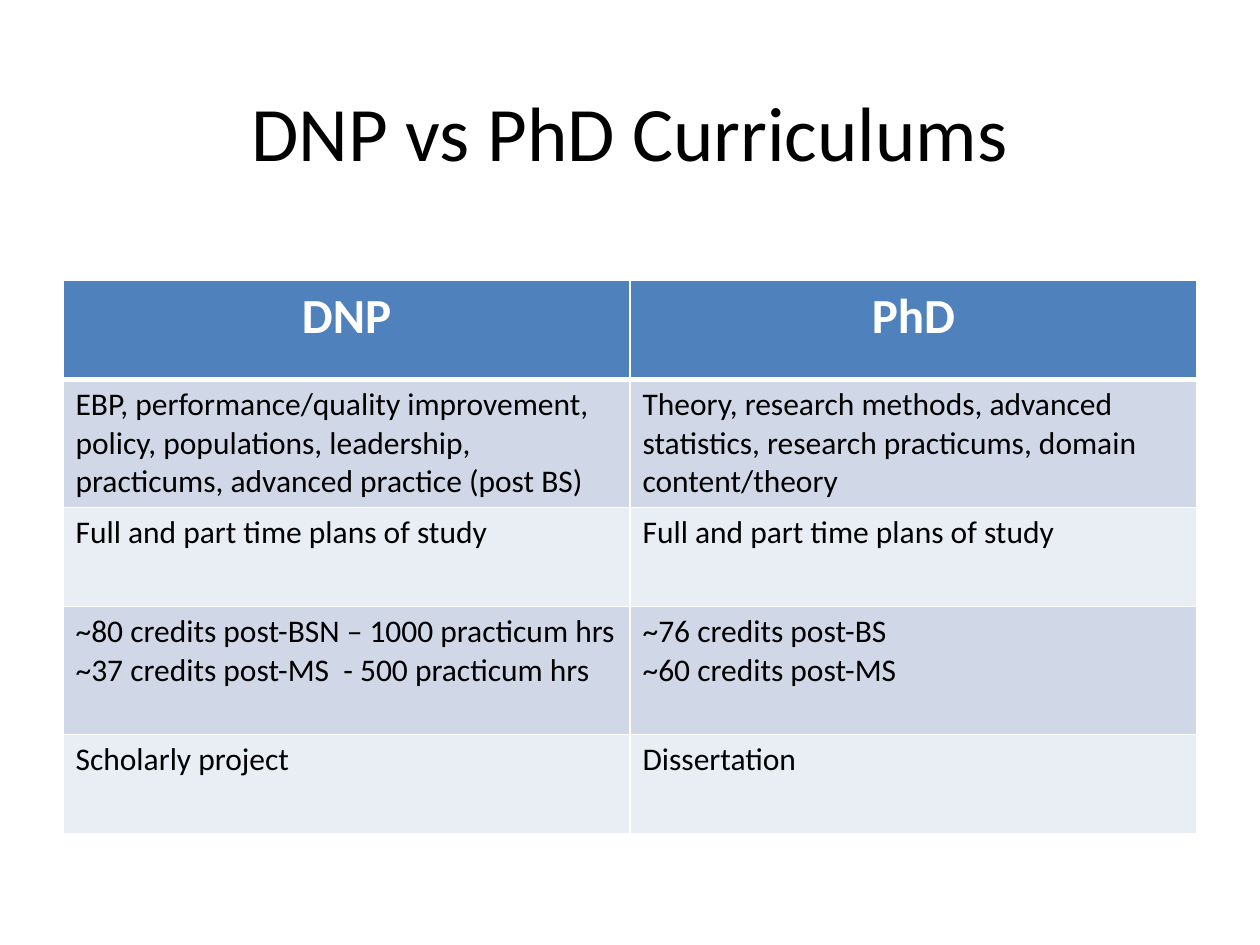
"""Build the slide comparing the DNP and PhD curriculums."""
from lxml.etree import SubElement
from pptx import Presentation
from pptx.dml.color import RGBColor
from pptx.enum.text import MSO_ANCHOR, PP_ALIGN
from pptx.oxml.ns import qn
from pptx.util import Cm, Pt

HEADING = "DNP vs PhD Curriculums"
CURRICULUMS = [
    ("DNP", "PhD"),
    (
        "EBP, performance/quality improvement, policy, populations, leadership, "
        "practicums, advanced practice (post BS)",
        "Theory, research methods, advanced statistics, research practicums, "
        "domain content/theory",
    ),
    ("Full and part time plans of study", "Full and part time plans of study"),
    (
        "~80 credits post-BSN – 1000 practicum hrs\n~37 credits post-MS  - 500 practicum hrs",
        "~76 credits post-BS\n~60 credits post-MS",
    ),
    ("Scholarly project", "Dissertation"),
]
ROW_HEIGHTS = [Cm(2), Cm(2.58), Cm(2), Cm(2.58), Cm(2)]

FONT = "Calibri"
BLACK = RGBColor(0x00, 0x00, 0x00)
WHITE = RGBColor(0xFF, 0xFF, 0xFF)
HEADER_BLUE = RGBColor(0x4F, 0x81, 0xBD)
BANDS = [RGBColor(0xE9, 0xED, 0xF4), RGBColor(0xD0, 0xD8, 0xE8)]
LEFT, WIDTH = Cm(1.27), Cm(22.86)


def style_text(frame, size, color, bold=False, align=PP_ALIGN.LEFT):
    for paragraph in frame.paragraphs:
        paragraph.alignment = align
        for run in paragraph.runs:
            run.font.name = FONT
            run.font.size = Pt(size)
            run.font.bold = bold
            run.font.color.rgb = color


def add_borders(cell, widths):
    properties = cell._tc.get_or_add_tcPr()
    for side, width in widths.items():
        line = SubElement(properties, qn(f"a:ln{side}"), w=str(Pt(width)))
        fill = SubElement(line, qn("a:solidFill"))
        SubElement(fill, qn("a:srgbClr"), val=str(WHITE))


def add_heading(slide):
    heading = slide.shapes.add_textbox(LEFT, Cm(1.47), WIDTH, Cm(2.34)).text_frame
    heading.word_wrap = True
    heading.vertical_anchor = MSO_ANCHOR.MIDDLE
    heading.text = HEADING
    style_text(heading, 44, BLACK, align=PP_ALIGN.CENTER)


def add_comparison(slide):
    comparison = slide.shapes.add_table(
        len(CURRICULUMS), 2, LEFT, Cm(5.65), WIDTH, sum(ROW_HEIGHTS)
    ).table
    for index, (entries, height) in enumerate(zip(CURRICULUMS, ROW_HEIGHTS)):
        comparison.rows[index].height = height
        is_header = index == 0
        top = 3 if index == 1 else 1
        bottom = 3 if is_header else 1
        for column, entry in enumerate(entries):
            cell = comparison.cell(index, column)
            cell.text_frame.text = entry
            add_borders(cell, {"L": 1, "R": 1, "T": top, "B": bottom})
            cell.fill.solid()
            cell.fill.fore_color.rgb = HEADER_BLUE if is_header else BANDS[index % 2]
            if is_header:
                style_text(cell.text_frame, 28, WHITE, True, PP_ALIGN.CENTER)
            else:
                style_text(cell.text_frame, 18, BLACK)


def main():
    deck = Presentation()
    deck.slide_width, deck.slide_height = Cm(25.4), Cm(19.05)
    slide = deck.slides.add_slide(deck.slide_layouts[6])
    add_heading(slide)
    add_comparison(slide)
    deck.save("out.pptx")


if __name__ == "__main__":
    main()
